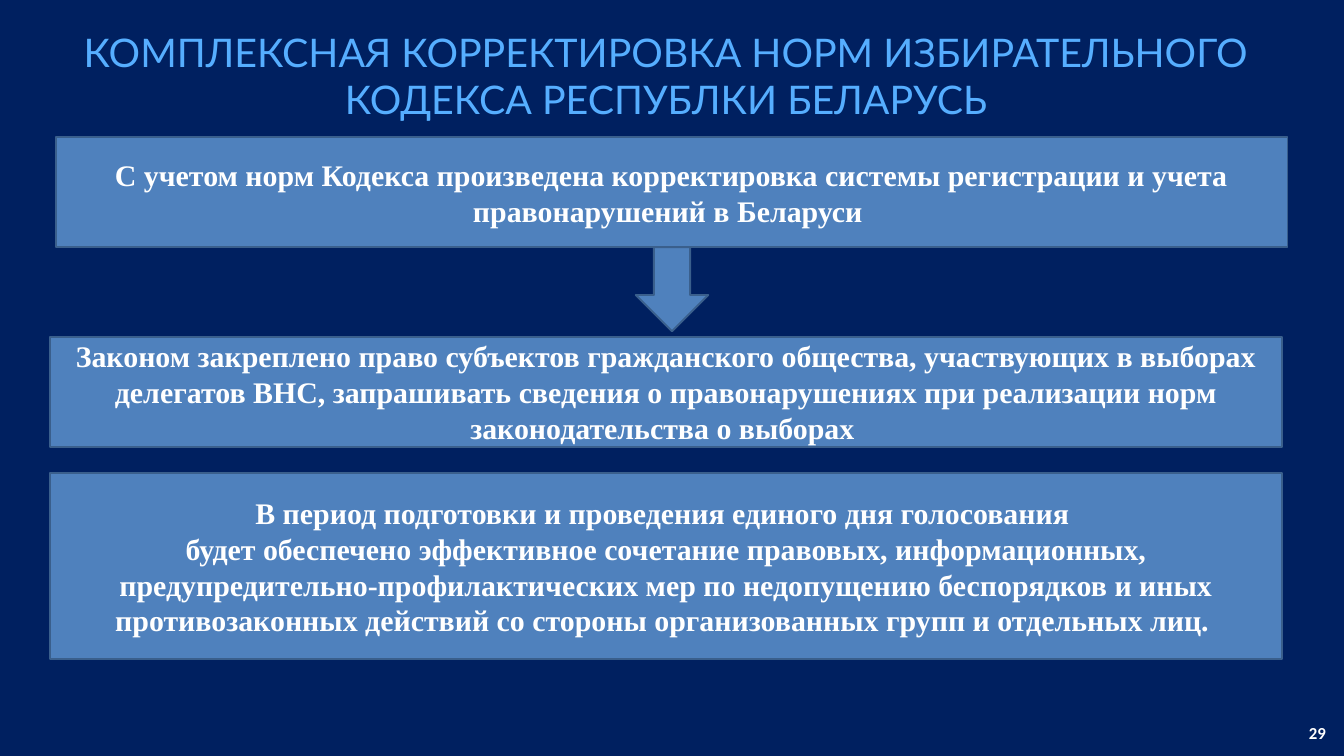
import dataclasses
import pptx
import pptx.dml.color
import pptx.enum.shapes
import pptx.enum.text
import pptx.util

Inches = pptx.util.Inches
Pt = pptx.util.Pt
Align = pptx.enum.text.PP_ALIGN
Anchor = pptx.enum.text.MSO_ANCHOR
Kind = pptx.enum.shapes.MSO_SHAPE


@dataclasses.dataclass(frozen=True)
class Theme:
    """Colours, fonts and type sizes of the slide."""
    back: str = "002060"
    title: str = "56AEFF"
    fill: str = "4F81BD"
    edge: str = "3A5F8C"
    white: str = "FFFFFF"
    head: str = "Lato"
    body: str = "Times New Roman"
    foot: str = "Calibri"
    large: float = 42.2
    lead: float = 50.6
    mid: float = 32
    small: float = 18
    rule: float = 2


THEME = Theme()
TITLE = "КОМПЛЕКСНАЯ КОРРЕКТИРОВКА НОРМ ИЗБИРАТЕЛЬНОГО КОДЕКСА РЕСПУБЛКИ БЕЛАРУСЬ"
BASIS = ["С учетом норм Кодекса произведена корректировка системы регистрации и учета "
         "правонарушений в Беларуси "]
RIGHT = ["Законом закреплено право субъектов гражданского общества, участвующих в выборах "
         "делегатов ВНС, запрашивать сведения о правонарушениях при реализации норм "
         "законодательства о выборах "]
PERIOD = ["В период подготовки и проведения единого дня голосования ",
          "будет обеспечено эффективное сочетание правовых, информационных, "
          "предупредительно-профилактических мер по недопущению беспорядков и иных "
          "противозаконных действий со стороны организованных групп и отдельных лиц. "]


def tint(code):
    """Turn a hex code into a colour."""
    return pptx.dml.color.RGBColor.from_string(code)


def write(frame, lines, *, font, size, color=THEME.white, bold=False,
          align=Align.CENTER, anchor=Anchor.MIDDLE, lead=None, inset=None):
    """Fill a text frame with one paragraph for each line."""
    frame.word_wrap = True
    frame.vertical_anchor = anchor
    if inset is not None:
        frame.margin_left = frame.margin_right = Inches(inset)
        frame.margin_top = frame.margin_bottom = Inches(inset)
    for i, line in enumerate(lines):
        para = frame.paragraphs[0] if i == 0 else frame.add_paragraph()
        para.alignment = align
        if lead:
            para.line_spacing = Pt(lead)
        run = para.add_run()
        run.text = line
        run.font.name = font
        run.font.size = Pt(size)
        run.font.bold = bold
        run.font.color.rgb = tint(color)


def block(slide, kind, box):
    """Draw a filled and outlined shape in a box."""
    shape = slide.shapes.add_shape(kind, *map(Inches, box))
    shape.shadow.inherit = False
    shape.fill.solid()
    shape.fill.fore_color.rgb = tint(THEME.fill)
    shape.line.color.rgb = tint(THEME.edge)
    shape.line.width = Pt(THEME.rule)
    return shape


def panel(slide, box, lines):
    """Place a panel with a bold statement."""
    shape = block(slide, Kind.RECTANGLE, box)
    write(shape.text_frame, lines, font=THEME.body, size=THEME.mid, bold=True)


def header(slide, box):
    """Place the slide title."""
    area = slide.shapes.add_textbox(*map(Inches, box))
    write(area.text_frame, [TITLE], font=THEME.head, size=THEME.large,
          color=THEME.title, anchor=Anchor.TOP, lead=THEME.lead, inset=0)


def footer(slide, box):
    """Place the page number."""
    area = slide.shapes.add_textbox(*map(Inches, box))
    write(area.text_frame, ["29"], font=THEME.foot, size=THEME.small,
          bold=True, align=Align.RIGHT)


def flow(slide, box):
    """Place the three panels and the arrow between the first two."""
    left, top, wide, tall = box
    high = 1.64
    panel(slide, (left + 0.08, top, wide, high), BASIS)
    block(slide, Kind.DOWN_ARROW, (left + 8.71, top + high, 1.08, 1.25))
    panel(slide, (left, top + 2.97, wide, high), RIGHT)
    panel(slide, (left, top + 5, wide, tall - 5), PERIOD)


def main():
    """Build and save the slide."""
    deck = pptx.Presentation()
    deck.slide_width = Inches(20)
    deck.slide_height = Inches(11.25)
    slide = deck.slides.add_slide(deck.slide_layouts[6])
    slide.background.fill.solid()
    slide.background.fill.fore_color.rgb = tint(THEME.back)
    footer(slide, (17.5, 10.71, 2.33, 0.4))
    header(slide, (0, 0.42, 19.83, 1.42))
    flow(slide, (0.75, 2.04, 18.33, 7.77))
    deck.save("out.pptx")


if __name__ == "__main__":
    main()
